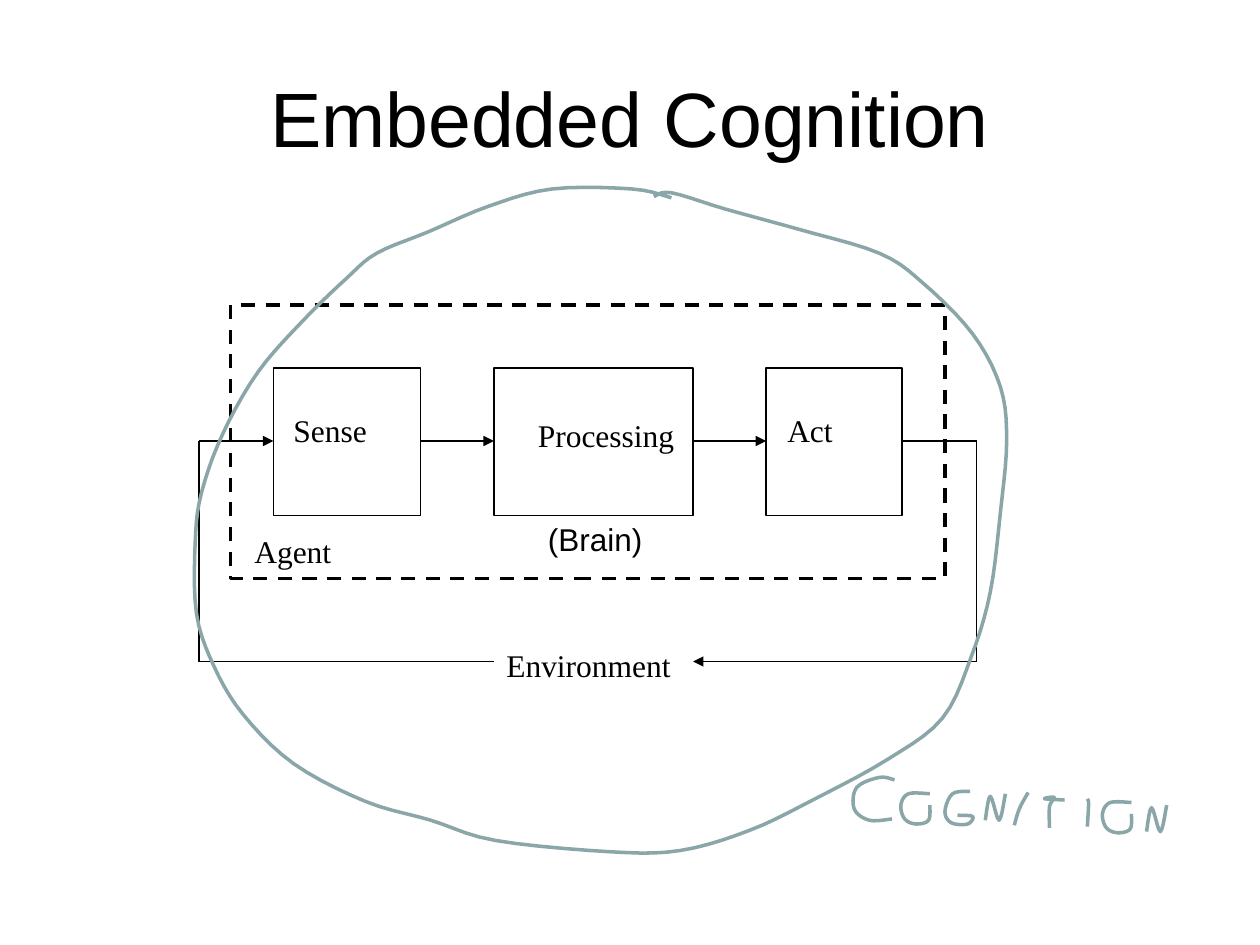
from typing import NamedTuple

from lxml.etree import SubElement
from pptx import Presentation
from pptx.dml.color import RGBColor
from pptx.enum.dml import MSO_LINE
from pptx.enum.shapes import MSO_CONNECTOR, MSO_SHAPE
from pptx.enum.text import MSO_ANCHOR, MSO_AUTO_SIZE, PP_ALIGN
from pptx.oxml.ns import qn
from pptx.util import Inches, Pt

COLORS = {"ink": "000000", "pen": "8AA6A8"}
SERIF, SANS = "Times New Roman", "Arial"
Point = tuple[float, float]


class Box(NamedTuple):
    x: float
    y: float
    w: float
    h: float
    weight: float = 0.75
    dashed: bool = False


class Label(NamedTuple):
    text: str
    x: float
    y: float
    w: float
    font: str = SERIF


class Link(NamedTuple):
    x1: float
    y1: float
    x2: float
    y2: float
    arrow: bool = False


class Stroke(NamedTuple):
    x: float
    y: float
    points: list[Point]


# Diagram grid: the loop runs along two rows between two outer columns
FLOW_Y, ENV_Y = 3.5, 5.25
LEFT, RIGHT = 1.58, 7.75
BOX_Y, BOX_H = 2.92, 1.17
SENSE = Box(2.17, BOX_Y, 1.17, BOX_H)
PROCESSING = Box(3.92, BOX_Y, 1.58, BOX_H)
ACT = Box(6.08, BOX_Y, 1.08, BOX_H)
AGENT = Box(1.83, 2.42, 5.67, 2.17, 2, True)

BOXES = [SENSE, PROCESSING, ACT, AGENT]
LABELS = [
    Label("Processing", 4.17, 3.25, 1.3),
    Label("Sense", 2.23, 3.21, 0.79),
    Label("Act", 6.15, 3.21, 0.57),
    Label("Environment", 3.92, 5.08, 1.52),
    Label("Agent", 1.92, 4.17, 0.82),
    Label("(Brain)", 4.25, 4.08, 0.96, SANS),
]
LINKS = [
    Link(LEFT, FLOW_Y, SENSE.x, FLOW_Y, True),
    Link(SENSE.x + SENSE.w, FLOW_Y, PROCESSING.x, FLOW_Y, True),
    Link(PROCESSING.x + PROCESSING.w, FLOW_Y, ACT.x, FLOW_Y, True),
    Link(ACT.x + ACT.w, FLOW_Y, RIGHT, FLOW_Y),
    Link(RIGHT, FLOW_Y, RIGHT, ENV_Y),
    Link(RIGHT, ENV_Y, PROCESSING.x + PROCESSING.w, ENV_Y, True),
    Link(LEFT, ENV_Y, PROCESSING.x, ENV_Y),
    Link(LEFT, FLOW_Y, LEFT, ENV_Y),
]

# Hand-drawn loop around the whole system
LOOP = [
    (5.33, 1.57), (5.02, 1.5), (4.38, 1.5), (3.87, 1.64), (3.4, 1.84),
    (2.99, 2.01), (2.75, 2.21), (2.41, 2.54), (2.05, 2.95), (1.77, 3.44),
    (1.6, 3.91), (1.55, 4.3), (1.56, 4.87), (1.7, 5.29), (1.93, 5.67),
    (2.33, 6.06), (2.9, 6.36), (3.42, 6.51), (3.93, 6.67), (4.84, 6.76),
    (5.4, 6.75), (5.95, 6.59), (6.45, 6.35), (7.04, 6.03), (7.48, 5.7),
    (7.71, 5.21), (7.86, 4.7), (7.94, 4.07), (7.99, 3.5), (7.94, 3.07),
    (7.72, 2.65), (7.33, 2.25), (6.98, 2.01), (6.34, 1.82), (5.76, 1.66),
    (5.33, 1.53), (5.19, 1.56),
]

# Handwritten letters, each from its own top left corner
C = [(0.33, 0.02), (0.21, 0), (0.03, 0.08), (0.01, 0.25), (0.13, 0.34),
     (0.31, 0.33)]
O = [(0.23, 0.01), (0.06, 0.01), (0, 0.1), (0.03, 0.21), (0.12, 0.25),
     (0.22, 0.22), (0.23, 0.1)]
G = [(0.2, 0), (0.06, 0.02), (0, 0.16), (0.05, 0.25), (0.18, 0.26),
     (0.22, 0.2), (0.1, 0.19)]
N = [(0, 0.21), (0.04, 0.02), (0.11, 0.21), (0.16, 0)]
SLANT = [(0.11, 0), (0.04, 0.13), (0, 0.26)]
T = [(0.04, 0.25), (0.04, 0.08), (0.08, 0.01), (0, 0.02), (0.16, 0.03)]
I = [(0, 0.22), (0.01, 0.04), (0, 0)]

STROKES = [
    Stroke(0, 0, LOOP), Stroke(6.77, 6.17, C), Stroke(7.15, 6.29, O),
    Stroke(7.5, 6.28, G), Stroke(7.82, 6.3, N), Stroke(8.05, 6.29, SLANT),
    Stroke(8.29, 6.32, T), Stroke(8.63, 6.34, I), Stroke(8.75, 6.36, O),
    Stroke(9.1, 6.39, N),
]


def set_line(line, color: str, weight: float) -> None:
    line.color.rgb = RGBColor.from_string(COLORS[color])
    line.width = Pt(weight)


def set_font(p, name: str, size: float) -> None:
    p.font.name, p.font.size = name, Pt(size)
    p.font.color.rgb = RGBColor.from_string(COLORS["ink"])


def add_box(s, box: Box) -> None:
    sp = s.shapes.add_shape(MSO_SHAPE.RECTANGLE, *map(Inches, box[:4]))
    sp.shadow.inherit = False
    sp.fill.background()
    set_line(sp.line, "ink", box.weight)
    if box.dashed:
        sp.line.dash_style = MSO_LINE.DASH


def add_label(s, label: Label) -> None:
    tb = s.shapes.add_textbox(*map(Inches, (label.x, label.y, label.w, 0.4)))
    tf = tb.text_frame
    tf.word_wrap = False
    tf.auto_size = MSO_AUTO_SIZE.SHAPE_TO_FIT_TEXT
    tf.text = label.text
    set_font(tf.paragraphs[0], label.font, 18)


def add_link(s, link: Link) -> None:
    cn = s.shapes.add_connector(MSO_CONNECTOR.STRAIGHT, *map(Inches, link[:4]))
    set_line(cn.line, "ink", 0.75)
    if link.arrow:
        SubElement(cn.line._get_or_add_ln(), qn("a:tailEnd"), type="triangle")
    SubElement(cn._element.spPr, qn("a:effectLst"))


def smooth(points: list[Point], steps: int = 5) -> list[Point]:
    """Catmull-Rom curve through the points."""
    ends = [points[0], *points, points[-1]]
    curve = [points[0]]
    for a, b, c, d in zip(ends, ends[1:], ends[2:], ends[3:]):
        for t in (i / steps for i in range(1, steps + 1)):
            curve.append(tuple(
                q + t / 2 * (r - p + t * (2 * p - 5 * q + 4 * r - u
                                          + t * (3 * (q - r) + u - p)))
                for p, q, r, u in zip(a, b, c, d)))
    return curve


def add_stroke(s, stroke: Stroke) -> None:
    start, *rest = [(Inches(stroke.x + x), Inches(stroke.y + y))
                    for x, y in smooth(stroke.points)]
    fb = s.shapes.build_freeform(*start)
    fb.add_line_segments(rest, close=False)
    sp = fb.convert_to_shape()
    sp.shadow.inherit = False
    sp.fill.background()
    set_line(sp.line, "pen", 2)


def main() -> None:
    prs = Presentation()
    prs.slide_width, prs.slide_height = Inches(10), Inches(7.5)
    s = prs.slides.add_slide(prs.slide_layouts[5])

    # Title
    title = s.shapes.title
    title.left, title.top = Inches(0.5), Inches(0.3)
    title.width, title.height = Inches(9), Inches(1.25)
    tf = title.text_frame
    tf.text = "Embedded Cognition"
    tf.vertical_anchor = MSO_ANCHOR.MIDDLE
    tf.paragraphs[0].alignment = PP_ALIGN.CENTER
    set_font(tf.paragraphs[0], SANS, 44)

    # Diagram, then the pen strokes on top
    for draw, items in ((add_box, BOXES), (add_link, LINKS),
                        (add_label, LABELS), (add_stroke, STROKES)):
        for item in items:
            draw(s, item)

    prs.save("out.pptx")


if __name__ == "__main__":
    main()
